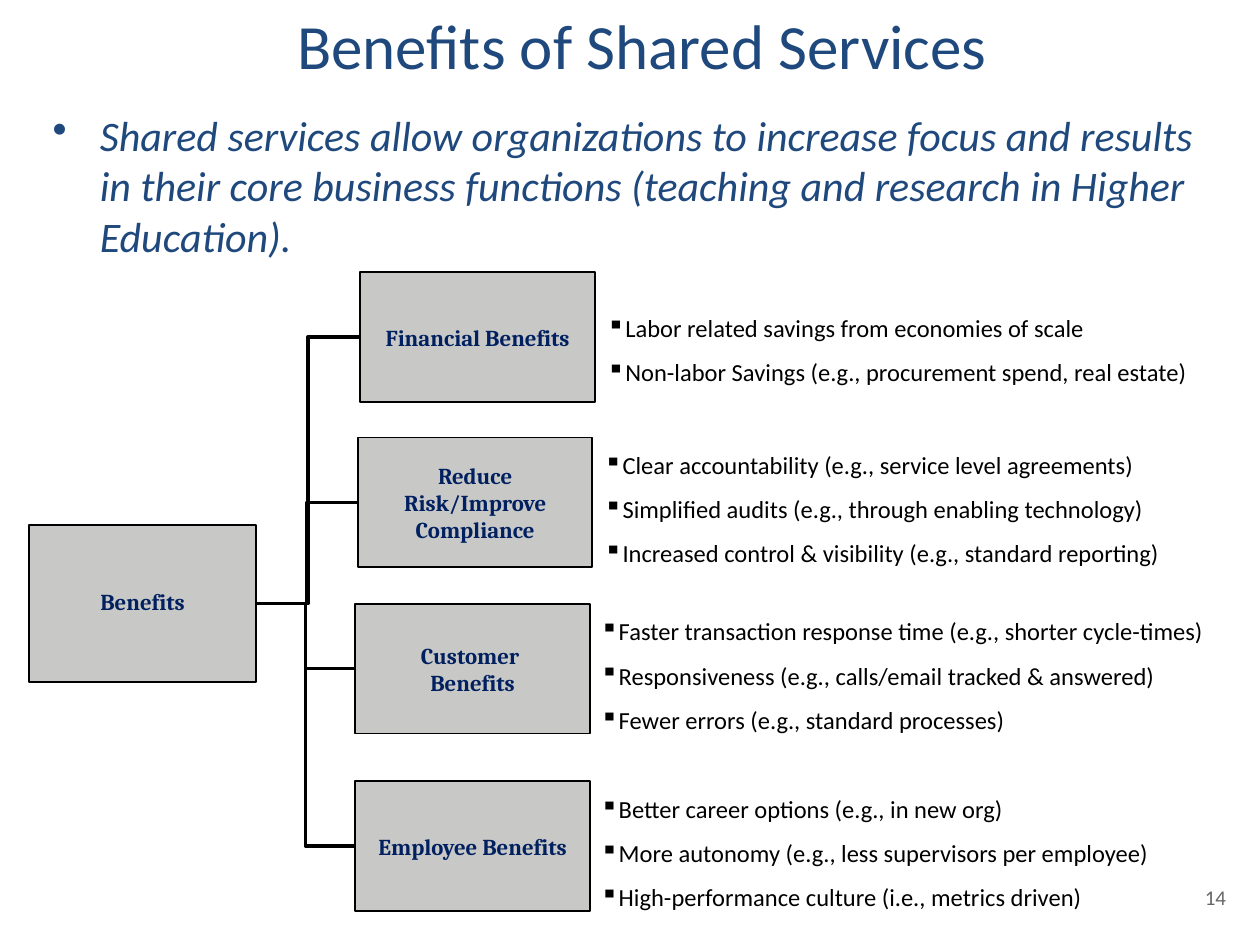
from pptx import Presentation
from pptx.dml.color import RGBColor
from pptx.enum.shapes import MSO_CONNECTOR, MSO_SHAPE
from pptx.enum.text import MSO_ANCHOR, PP_ALIGN
from pptx.util import Pt
from lxml.etree import SubElement
from pptx.oxml.ns import qn

TITLE = "Benefits of Shared Services"
INTRO = ("Shared services allow organizations to increase focus and results in their core "
         "business functions (teaching and research in Higher Education).")
ROOT = "Benefits"
PAGE = "14"
BRANCHES = [
    dict(label=["Financial Benefits"], left=205.9, top=155.5, text_left=339.8, text_width=395.2,
         drop=3.6, points=[
             "Labor related savings from economies of scale",
             "Non-labor Savings (e.g., procurement spend, real estate)"]),
    dict(label=["Reduce Risk/Improve Compliance"], left=204.5, top=250, text_left=338.2,
         text_width=395.2, drop=0, points=[
             "Clear accountability (e.g., service level agreements)",
             "Simplified audits (e.g., through enabling technology)",
             "Increased control & visibility (e.g., standard reporting)"]),
    dict(label=["Customer ", "Benefits"], left=203, top=345, text_left=336, text_width=394.5,
         drop=0, points=[
             "Faster transaction response time (e.g., shorter cycle-times)",
             "Responsiveness (e.g., calls/email tracked & answered)",
             "Fewer errors (e.g., standard processes)"]),
    dict(label=["Employee Benefits"], left=203, top=446.4, text_left=336, text_width=370.8,
         drop=0, points=[
             "Better career options (e.g., in new org)",
             "More autonomy (e.g., less supervisors per employee)",
             "High-performance culture (i.e., metrics driven)"]),
]

THEME = dict(
    title=dict(size=36, font="Calibri", color="1F497D"),
    intro=dict(size=24, font="Calibri", color="1F497D", italic=True),
    box=dict(size=13, font="Cambria", color="002060", bold=True),
    point=dict(size=14, font="Calibri", color="000000"),
    page=dict(size=12, font="Calibri", color="666666"),
    fill="C8C9C7", line="000000",
)
BOX_W, BOX_H = 134, 74.2
ROW_H, PAD = 25.2, 8


def write(tf, lines, style, align=PP_ALIGN.LEFT, anchor=MSO_ANCHOR.TOP,
          spacing=None, bullet=None, indent=0):
    tf.word_wrap = True
    tf.vertical_anchor = anchor
    for i, line in enumerate(lines):
        p = tf.paragraphs[0] if i == 0 else tf.add_paragraph()
        p.alignment = align
        if spacing:
            p.line_spacing = spacing
        if bullet:
            pPr = p._p.get_or_add_pPr()
            pPr.set("marL", str(Pt(indent)))
            pPr.set("indent", str(-Pt(indent)))
            SubElement(pPr, qn("a:buChar")).set("char", bullet)
        r = p.add_run()
        r.text = line
        r.font.size = Pt(style["size"])
        r.font.name = style["font"]
        r.font.color.rgb = RGBColor.from_string(style["color"])
        r.font.bold = style.get("bold", False)
        r.font.italic = style.get("italic", False)


def add_text(s, x, y, w, h, lines, style, **options):
    tb = s.shapes.add_textbox(Pt(x), Pt(y), Pt(w), Pt(h))
    write(tb.text_frame, lines, style, **options)


def add_box(s, x, y, w, h, lines, spacing=None):
    sp = s.shapes.add_shape(MSO_SHAPE.RECTANGLE, Pt(x), Pt(y), Pt(w), Pt(h))
    sp.shadow.inherit = False
    sp.fill.solid()
    sp.fill.fore_color.rgb = RGBColor.from_string(THEME["fill"])
    sp.line.color.rgb = RGBColor.from_string(THEME["line"])
    sp.line.width = Pt(1)
    write(sp.text_frame, lines, THEME["box"], align=PP_ALIGN.CENTER,
          anchor=MSO_ANCHOR.MIDDLE, spacing=spacing)
    return sp


def join(s, branch, root):
    c = s.shapes.add_connector(MSO_CONNECTOR.ELBOW, 0, 0, 0, 0)
    c.begin_connect(branch, 1)
    c.end_connect(root, 3)
    c.line.color.rgb = RGBColor.from_string(THEME["line"])
    c.line.width = Pt(2)
    SubElement(c._element.spPr, qn("a:effectLst"))


def main():
    prs = Presentation()
    prs.slide_width, prs.slide_height = Pt(720), Pt(540)
    s = prs.slides.add_slide(prs.slide_layouts[6])

    add_text(s, 23, 59, 684, 94.3, [INTRO], THEME["intro"], bullet="•", indent=27)
    add_text(s, 82, 18, 570, 32.4, [TITLE], THEME["title"],
             align=PP_ALIGN.CENTER, anchor=MSO_ANCHOR.BOTTOM)
    root = add_box(s, 16.6, 300.2, 129.6, 89.4, [ROOT], spacing=0.9)

    for b in BRANCHES:
        box = add_box(s, b["left"], b["top"], BOX_W, BOX_H, b["label"])
        join(s, box, root)
        h = PAD + ROW_H * len(b["points"])
        y = b["top"] + (BOX_H - h) / 2 + b["drop"]
        add_text(s, b["text_left"], y, b["text_width"], h, b["points"], THEME["point"],
                 spacing=1.5, bullet="▪", indent=9)

    add_text(s, 574.5, 505.5, 133.2, 14.4, [PAGE], THEME["page"],
             align=PP_ALIGN.RIGHT, anchor=MSO_ANCHOR.MIDDLE)
    prs.save("out.pptx")


if __name__ == "__main__":
    main()
